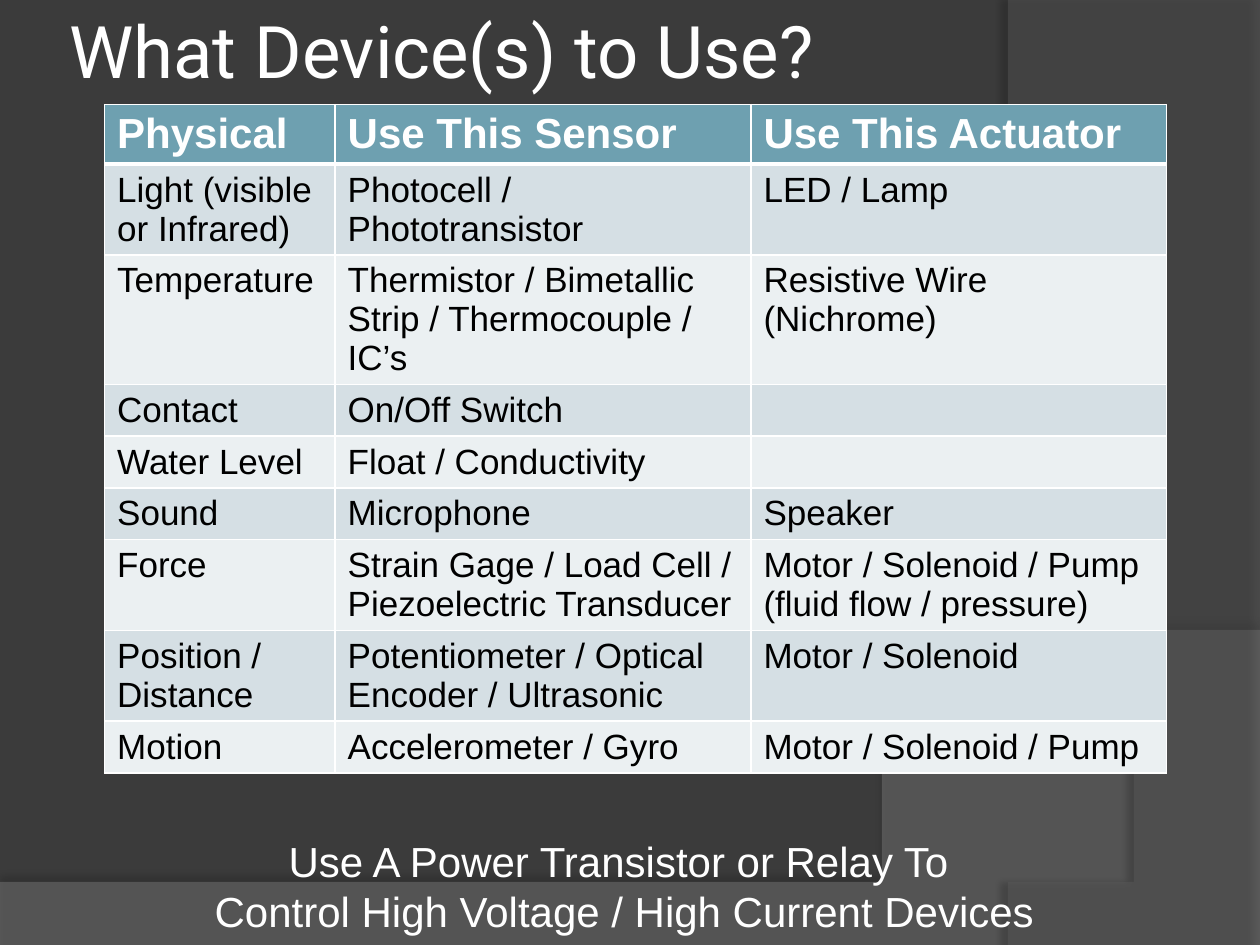
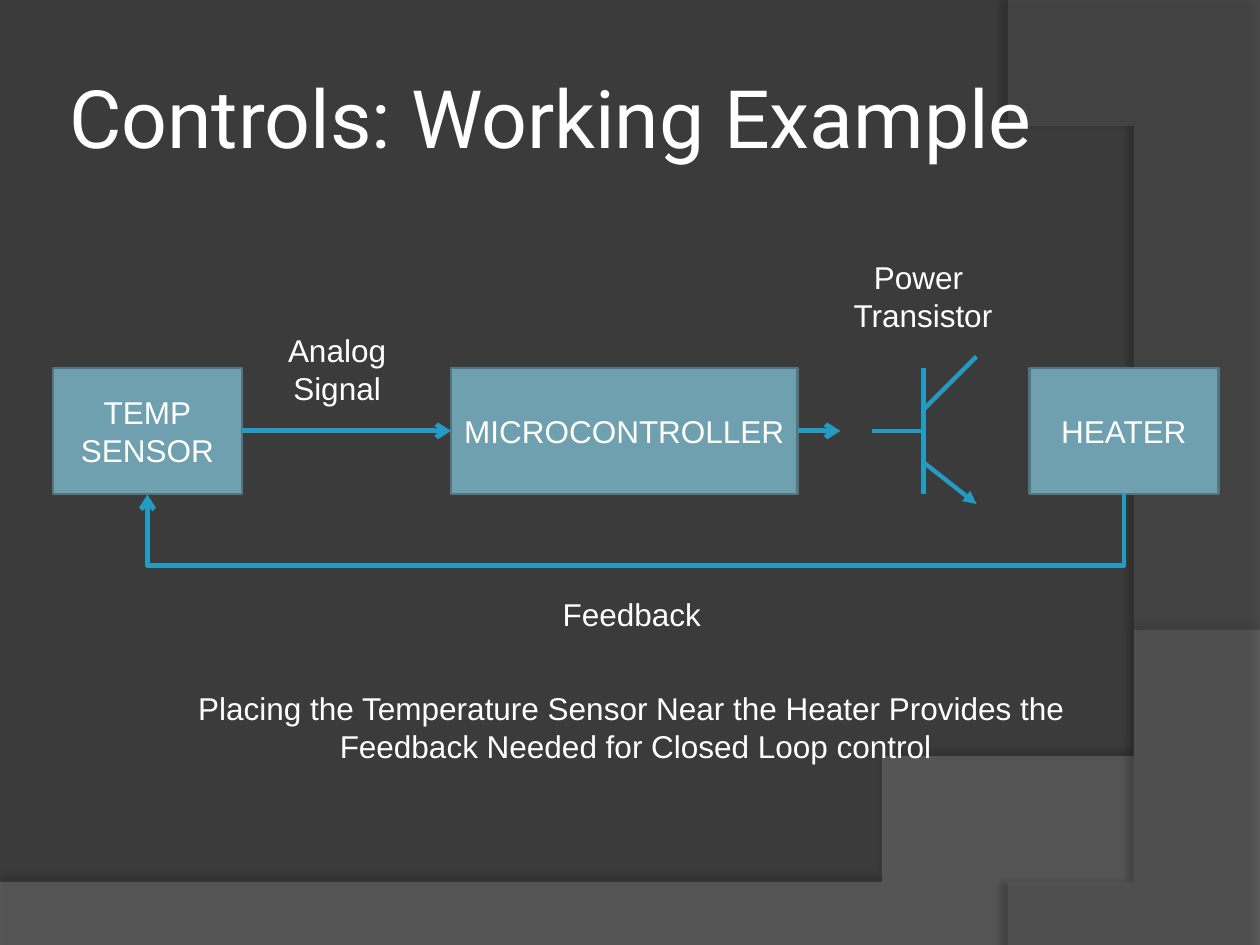
from lxml import etree
from pptx import Presentation
from pptx.dml.color import RGBColor
from pptx.enum.shapes import MSO_CONNECTOR as LineKind, MSO_SHAPE as Preset
from pptx.enum.text import MSO_ANCHOR as Anchor, MSO_AUTO_SIZE as AutoSize, PP_ALIGN as Align
from pptx.oxml import parse_xml
from pptx.oxml.ns import nsdecls, qn
from pptx.util import Inches, Pt

rgb = RGBColor.from_string
WHITE, BLACK, BACKGROUND = "FFFFFF", "000000", "3B3B3B"
TEAL, TEAL_EDGE, LINE_BLUE = "6EA0B0", "517682", "239BC2"
ROW_FILLS = ("D5DFE4", "EBF0F2")
BOTTOM, LEFT, RIGHT = 2, 1, 3


def format_text(text_frame, size, color=WHITE, font="Arial", bold=False, align=Align.LEFT):
    for paragraph in text_frame.paragraphs:
        paragraph.alignment = align
        for run in paragraph.runs:
            run.font.size, run.font.name, run.font.bold = Pt(size), font, bold
            run.font.color.rgb = rgb(color)


def draw_line(shapes, start, end, width, arrow=None, kind=LineKind.STRAIGHT):
    line = shapes.add_connector(kind, *[Inches(value) for value in start + end])
    line.line.color.rgb = rgb(LINE_BLUE)
    line.line.width = Pt(width)
    properties = line.element.spPr
    if arrow:
        etree.SubElement(properties.find(qn("a:ln")), qn("a:tailEnd"), type=arrow)
    etree.SubElement(properties, qn("a:effectLst"))
    return line


presentation = Presentation()
presentation.slide_width, presentation.slide_height = Inches(10), Inches(7.5)
title_only = presentation.slide_layouts[5]

# Slides and their titles
slides = []
for title_text, top, height, size in [
    ("What Device(s) to Use?", 0, 0.78, 41.4),
    ("Controls: Working Example", 0.3, 1.25, 46),
]:
    slide = presentation.slides.add_slide(title_only)
    title = slide.shapes.title
    title.left, title.top = Inches(0.5), Inches(top)
    title.width, title.height = Inches(8.17), Inches(height)
    frame = title.text_frame
    frame.text = title_text
    frame.auto_size, frame.vertical_anchor = AutoSize.NONE, Anchor.MIDDLE
    frame.margin_left = frame.margin_right = Inches(0.05)
    frame.margin_top = frame.margin_bottom = Inches(0.05)
    format_text(frame, size, font="Roboto")
    slides.append(slide)
device_slide, control_slide = slides

# Shared background: translucent curved bands, moved to the master
master = presentation.slide_master
master.background.fill.solid()
master.background.fill.fore_color.rgb = rgb(BACKGROUND)
bands = [
    # Bezier curve, closing corners, fill, opacity, shadow opacity, distance, direction
    ([(10, 5.2), (5.59, 7.29), (3.91, 7.19), (0, 7.05)],
     [(0, 7.5), (10, 7.5)], "7F7F7F", 45, 35, 3.5, 270),
    ([(8.21, 7.5), (9.35, 6.19), (10.18, 3), (8, 0)],
     [(10, 0.02), (10, 7.5)], "5E5E5E", 40, 45, 4, 180),
]
STEPS = 60
for index, (curve, corners, color, opacity, shade, distance, direction) in enumerate(bands):
    points = []
    for step in range(STEPS + 1):
        t = step / STEPS
        weights = ((1 - t) ** 3, 3 * t * (1 - t) ** 2, 3 * t * t * (1 - t), t ** 3)
        points.append(tuple(sum(w * p[axis] for w, p in zip(weights, curve)) for axis in (0, 1)))
    builder = device_slide.shapes.build_freeform(*points[0], scale=Inches(1))
    builder.add_line_segments(points[1:] + corners, close=True)
    band = builder.convert_to_shape()
    band.fill.solid()
    band.fill.fore_color.rgb = rgb(color)
    band.line.fill.background()
    fill_color = band.element.spPr.find(qn("a:solidFill"))[0]
    etree.SubElement(fill_color, qn("a:alpha"), val=str(opacity * 1000))
    band.element.spPr.append(parse_xml(
        f'<a:effectLst {nsdecls("a")}><a:outerShdw blurRad="{Pt(4)}" dist="{Pt(distance)}" '
        f'dir="{direction * 60000}" algn="ctr" rotWithShape="0"><a:srgbClr val="{BLACK}">'
        f'<a:alpha val="{shade * 1000}"/></a:srgbClr></a:outerShdw></a:effectLst>'))
    master.shapes.element.insert(2 + index, band.element)

# Device table
devices = [
    ("Physical", "Use This Sensor", "Use This Actuator"),
    ("Light (visible or Infrared)", "Photocell / Phototransistor", "LED / Lamp"),
    ("Temperature", "Thermistor / Bimetallic Strip / Thermocouple / IC’s",
     "Resistive Wire (Nichrome)"),
    ("Contact", "On/Off Switch", ""),
    ("Water Level", "Float / Conductivity", ""),
    ("Sound", "Microphone", "Speaker"),
    ("Force", "Strain Gage / Load Cell / Piezoelectric Transducer",
     "Motor / Solenoid / Pump (fluid flow / pressure)"),
    ("Position / Distance", "Potentiometer / Optical Encoder / Ultrasonic", "Motor / Solenoid"),
    ("Motion", "Accelerometer / Gyro", "Motor / Solenoid / Pump"),
]
row_heights = (0.47, 0.41, 0.72, 0.41, 0.41, 0.41, 0.72, 0.72, 0.41)
table = device_slide.shapes.add_table(
    len(devices), 3, Inches(0.83), Inches(0.83), Inches(8.43), Inches(sum(row_heights))).table
for column, width in zip(table.columns, (1.83, 3.3, 3.3)):
    column.width = Inches(width)
for row_index, (texts, height) in enumerate(zip(devices, row_heights)):
    table.rows[row_index].height = Inches(height)
    header = row_index == 0
    for column_index, text in enumerate(texts):
        cell = table.cell(row_index, column_index)
        cell.text = text
        format_text(cell.text_frame, 24 if header else 20, WHITE if header else BLACK, bold=header)
        cell.fill.solid()
        cell.fill.fore_color.rgb = rgb(TEAL if header else ROW_FILLS[(row_index - 1) % 2])
        # Borders come before the fill; the rule under the header is thicker
        for position, side in enumerate("LRTB"):
            thick = (row_index, side) in ((0, "B"), (1, "T"))
            cell._tc.tcPr.insert(position, parse_xml(
                f'<a:ln{side} {nsdecls("a")} w="{Pt(3 if thick else 1)}"><a:solidFill>'
                f'<a:srgbClr val="{WHITE}"/></a:solidFill></a:ln{side}>'))

# Control blocks
blocks = {}
for text, left, width in [
    ("TEMP\nSENSOR", 0.42, 1.5), ("MICROCONTROLLER", 3.58, 2.75), ("HEATER", 8.17, 1.5),
]:
    block = control_slide.shapes.add_shape(
        Preset.RECTANGLE, Inches(left), Inches(2.92), Inches(width), Inches(1))
    block.shadow.inherit = False
    block.fill.solid()
    block.fill.fore_color.rgb = rgb(TEAL)
    block.line.color.rgb = rgb(TEAL_EDGE)
    block.line.width = Pt(1.5)
    block.text_frame.text = text
    block.text_frame.vertical_anchor = Anchor.MIDDLE
    format_text(block.text_frame, 18, align=Align.CENTER)
    blocks[text] = block
sensor, controller, heater = blocks.values()

# Signal arrows
signal = draw_line(control_slide.shapes, (1.92, 3.42), (3.58, 3.42), 2.75, "arrow")
signal.begin_connect(sensor, RIGHT)
signal.end_connect(controller, LEFT)
output = draw_line(control_slide.shapes, (6.33, 3.42), (6.67, 3.42), 2.75, "arrow")
output.begin_connect(controller, RIGHT)

# Feedback loop: an elbow turned by 90 degrees that drops 0.58 below the blocks
feedback = draw_line(control_slide.shapes, (8.92, 3.92), (1.17, 3.92), 2.75, "arrow",
                     LineKind.ELBOW)
feedback.begin_connect(heater, BOTTOM)
feedback.end_connect(sensor, BOTTOM)
span, depth = 7.75, 0.01
feedback.left, feedback.top = Inches(5.04), Inches(3.92 - span / 2)
feedback.width, feedback.height = Inches(depth), Inches(span)
transform = feedback.element.spPr.find(qn("a:xfrm"))
transform.set("rot", str(90 * 60000))
transform.set("flipH", "0")
transform.set("flipV", "0")
adjustments = feedback.element.spPr.find(qn("a:prstGeom")).get_or_add_avLst()
etree.SubElement(adjustments, qn("a:gd"), name="adj1", fmla=f"val {round(0.58 / depth * 100000)}")

# Transistor symbol
transistor = control_slide.shapes.add_group_shape()
for start, end, arrow in [
    ((7.33, 2.92), (7.33, 3.92), None),
    ((7.75, 2.83), (7.33, 3.25), None),
    ((7.33, 3.67), (7.75, 4), "triangle"),
    ((6.92, 3.42), (7.33, 3.42), None),
]:
    draw_line(transistor.shapes, start, end, 2.5, arrow)

# Labels and closing notes
for slide, text, left, top, width, height, size, wrap in [
    (device_slide, "Use A Power Transistor or Relay To \nControl High Voltage / High Current Devices",
     -0.04, 6.58, 9.99, 0.91, 24, True),
    (control_slide, "Power \nTransistor", 6.67, 2, 1.31, 0.71, 18, False),
    (control_slide, "Feedback", 4.36, 4.67, 1.31, 0.4, 18, False),
    (control_slide, "Placing the Temperature Sensor Near the Heater Provides the \n"
     "Feedback Needed for Closed Loop control", 0.92, 5.42, 8.25, 0.71, 18, True),
    (control_slide, "Analog\nSignal", 2.18, 2.58, 0.99, 0.71, 18, False),
]:
    label = slide.shapes.add_textbox(Inches(left), Inches(top), Inches(width), Inches(height))
    label.text_frame.text = text
    label.text_frame.word_wrap = wrap
    label.text_frame.auto_size = AutoSize.SHAPE_TO_FIT_TEXT
    format_text(label.text_frame, size, align=Align.CENTER)

presentation.save("out.pptx")
